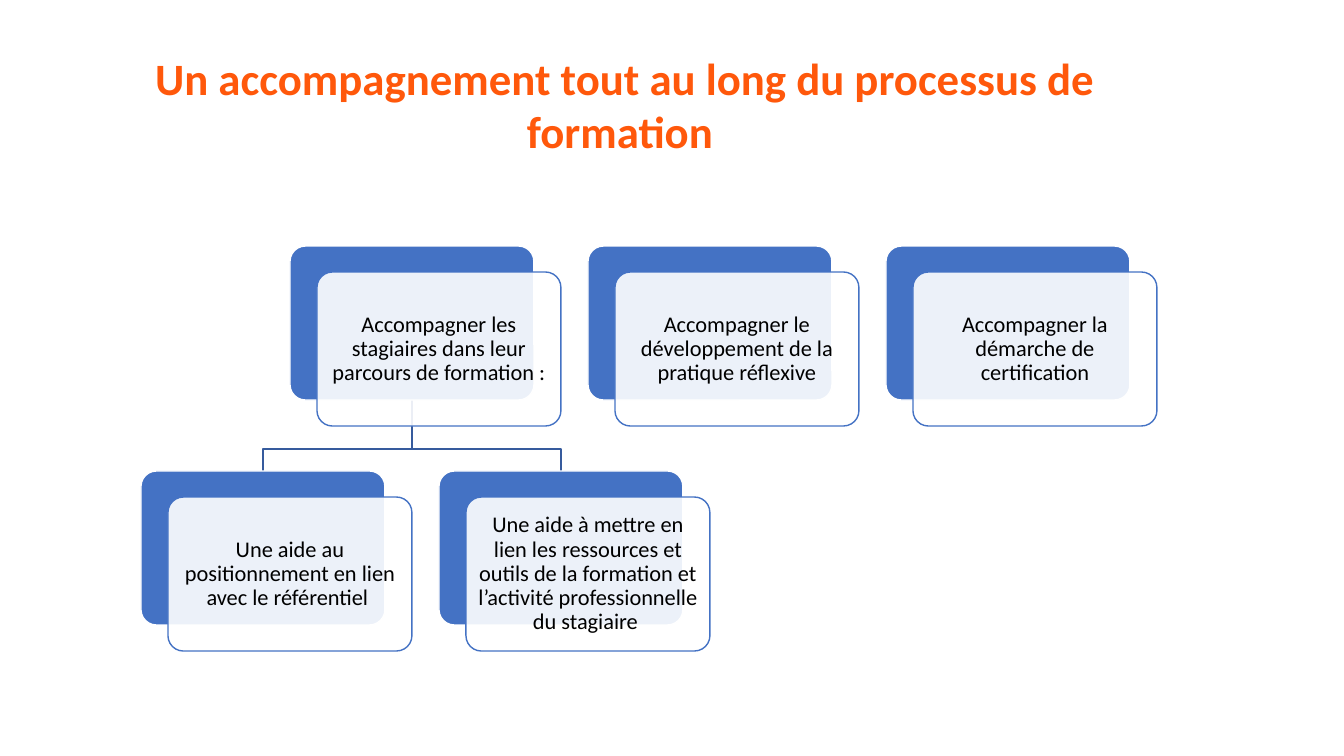
from dataclasses import dataclass

from lxml.etree import SubElement
from pptx import Presentation
from pptx.dml.color import RGBColor
from pptx.enum.shapes import MSO_SHAPE
from pptx.enum.text import MSO_ANCHOR, MSO_AUTO_SIZE, PP_ALIGN
from pptx.oxml.ns import qn
from pptx.util import Pt

SCALE = 914400 / 100.8
CARD_WIDTH, CARD_HEIGHT = 244, 154
OFFSET_X, OFFSET_Y = 27, 26
COLUMN_STEP = 298
ROOT_LEFT, ROOT_TOP = 290, 246
CHILD_LEFT, CHILD_TOP = ROOT_LEFT - COLUMN_STEP // 2, 471
BEND_Y = 449

TITLE = "Un accompagnement tout au long du processus de formation "
ROOTS = [
    "Accompagner les stagiaires dans leur parcours de formation :",
    "Accompagner le développement de la pratique réflexive",
    "Accompagner la démarche de certification",
]
CHILDREN = [
    "Une aide au positionnement en lien avec le référentiel ",
    "Une aide à mettre en lien les ressources et outils de la formation "
    "et l’activité professionnelle du stagiaire ",
]


@dataclass(frozen=True)
class Theme:
    font: str = "Calibri"
    title_size: int = 32
    card_size: int = 16
    title: str = "FF580B"
    text: str = "000000"
    accent: str = "4472C4"
    paper: str = "FFFFFF"
    branch: str = "365B9D"
    card_opacity: int = 90


def px(length):
    return round(length * SCALE)


def apply(target, values):
    for name, value in values.items():
        setattr(target, name, value)


class SlideBuilder:
    def __init__(self, page, theme):
        self.page = page
        self.theme = theme

    def set_text(self, shape, text, size, color, inset, spacing, bold=False):
        frame = shape.text_frame
        margins = {f"margin_{side}": px(inset) for side in ("left", "top", "right", "bottom")}
        apply(frame, {
            "word_wrap": True,
            "auto_size": MSO_AUTO_SIZE.NONE,
            "vertical_anchor": MSO_ANCHOR.MIDDLE,
            **margins,
        })
        para = frame.paragraphs[0]
        apply(para, {"alignment": PP_ALIGN.CENTER, "line_spacing": spacing})
        span = para.add_run()
        span.text = text
        apply(span.font, {"name": self.theme.font, "size": Pt(size), "bold": bold})
        span.font.color.rgb = RGBColor.from_string(color)

    def outline(self, shape, color):
        shape.shadow.inherit = False
        shape.line.color.rgb = RGBColor.from_string(color)
        shape.line.width = Pt(1)

    def title(self, text, left, top, width, height):
        box = self.page.shapes.title
        apply(box, {"left": px(left), "top": px(top), "width": px(width), "height": px(height)})
        self.set_text(box, text, self.theme.title_size, self.theme.title, 8, 1.0, True)

    def panel(self, left, top, fill, line):
        box = self.page.shapes.add_shape(
            MSO_SHAPE.ROUNDED_RECTANGLE, px(left), px(top), px(CARD_WIDTH), px(CARD_HEIGHT)
        )
        box.adjustments[0] = 0.1
        box.fill.solid()
        box.fill.fore_color.rgb = RGBColor.from_string(fill)
        self.outline(box, line)
        return box

    def card(self, text, left, top):
        theme = self.theme
        self.panel(left, top, theme.accent, theme.paper)
        front = self.panel(left + OFFSET_X, top + OFFSET_Y, theme.paper, theme.accent)
        color = front.element.spPr.find(qn("a:solidFill"))[0]
        SubElement(color, qn("a:alpha"), val=str(theme.card_opacity * 1000))
        self.set_text(front, text, theme.card_size, theme.text, 7, 0.9)

    def card_row(self, texts, left, top):
        for column, text in enumerate(texts):
            self.card(text, left + column * COLUMN_STEP, top)

    def branch(self, start_x, start_y, end_x, end_y):
        outline = self.page.shapes.build_freeform(px(start_x), px(start_y))
        corners = [(start_x, BEND_Y), (end_x, BEND_Y), (end_x, end_y)]
        outline.add_line_segments([(px(x), px(y)) for x, y in corners], close=False)
        shape = outline.convert_to_shape()
        shape.fill.background()
        self.outline(shape, self.theme.branch)


def main():
    deck = Presentation()
    apply(deck, {"slide_width": px(1344), "slide_height": px(756)})
    page = deck.slides.add_slide(deck.slide_layouts.get_by_name("Title Only"))
    builder = SlideBuilder(page, Theme())

    builder.title(TITLE, 59, 41, 1132, 126)
    middle = CARD_WIDTH // 2
    for column in range(len(CHILDREN)):
        builder.branch(
            ROOT_LEFT + middle, ROOT_TOP + CARD_HEIGHT,
            CHILD_LEFT + column * COLUMN_STEP + middle, CHILD_TOP,
        )
    builder.card_row(ROOTS, ROOT_LEFT, ROOT_TOP)
    builder.card_row(CHILDREN, CHILD_LEFT, CHILD_TOP)
    deck.save("out.pptx")


if __name__ == "__main__":
    main()
